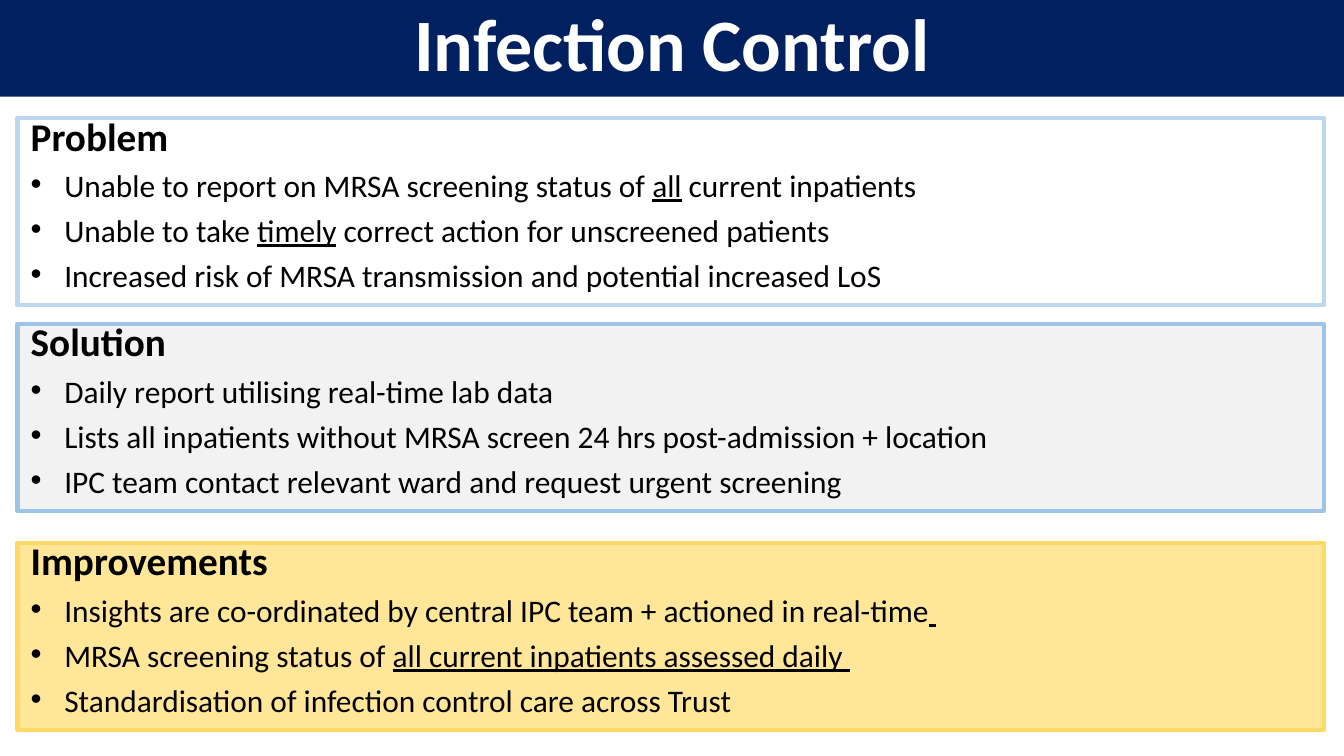
from lxml import etree
from pptx import Presentation
from pptx.dml.color import RGBColor
from pptx.enum.shapes import MSO_SHAPE
from pptx.enum.text import MSO_ANCHOR, MSO_AUTO_SIZE, PP_ALIGN
from pptx.oxml.ns import qn
from pptx.util import Inches, Pt

RECTANGLE = MSO_SHAPE.RECTANGLE
TOP, MIDDLE = MSO_ANCHOR.TOP, MSO_ANCHOR.MIDDLE
LEFT, CENTER = PP_ALIGN.LEFT, PP_ALIGN.CENTER
NO_AUTOFIT = MSO_AUTO_SIZE.NONE

FONT = "Calibri"
SLIDE_WIDTH = 10
SLIDE_HEIGHT = SLIDE_WIDTH * 9 / 16
BULLET_INDENT = Inches(0.25)
PANEL_LEFT, PANEL_WIDTH, PANEL_HEIGHT = 0.13, 9.72, 1.39

# Each bullet is a list of (text, underlined) spans.
PANELS = [
    (0.88, "FFFFFF", "BDD7EE", "Problem", [
        [("Unable to report on MRSA screening status of ", False),
         ("all", True), (" current inpatients", False)],
        [("Unable to take ", False), ("timely", True),
         (" correct action for unscreened patients", False)],
        [("Increased risk of MRSA transmission and potential increased LoS", False)],
    ]),
    (2.41, "F2F2F2", "9DC3E6", "Solution", [
        [("Daily report utilising real-time lab data", False)],
        [("Lists all inpatients without MRSA screen 24 hrs post-admission + location", False)],
        [("IPC team contact relevant ward and request urgent screening", False)],
    ]),
    (4.04, "FFE699", "FFD966", "Improvements", [
        [("Insights are co-ordinated by central IPC team + actioned in real-time", False),
         (" ", True)],
        [("MRSA screening status of ", False),
         ("all current inpatients assessed daily ", True)],
        [("Standardisation of infection control care across Trust", False)],
    ]),
]


def color(hex_string):
    return RGBColor.from_string(hex_string)


def add_span(para, text, size, fill="000000", bold=False, underline=False):
    span = para.add_run()
    span.text = text
    font = span.font
    font.name, font.size, font.bold = FONT, Pt(size), bold
    font.underline = underline
    font.color.rgb = color(fill)


def add_bullet(para):
    """Give the paragraph a hanging round bullet."""
    properties = para._p.get_or_add_pPr()
    properties.set("marL", str(BULLET_INDENT))
    properties.set("indent", str(-BULLET_INDENT))
    etree.SubElement(properties, qn("a:buFont"), typeface="Arial")
    etree.SubElement(properties, qn("a:buChar"), char="•")


def format_frame(frame, anchor):
    frame.word_wrap = True
    frame.auto_size = NO_AUTOFIT
    frame.vertical_anchor = anchor


def format_title(title, left, top, width, height):
    title.left, title.top = Inches(left), Inches(top)
    title.width, title.height = Inches(width), Inches(height)
    title.fill.solid()
    title.fill.fore_color.rgb = color("002060")
    format_frame(title.text_frame, MIDDLE)
    para = title.text_frame.paragraphs[0]
    para.alignment, para.line_spacing = CENTER, 0.9
    add_span(para, "Infection Control", 39.6, fill="FFFFFF", bold=True)


def add_panel(slide, left, top, width, height, fill, outline, heading, bullets):
    panel = slide.shapes.add_shape(
        RECTANGLE, Inches(left), Inches(top), Inches(width), Inches(height))
    panel.shadow.inherit = False
    panel.fill.solid()
    panel.fill.fore_color.rgb = color(fill)
    panel.line.color.rgb = color(outline)
    panel.line.width = Pt(2.25)

    frame = panel.text_frame
    format_frame(frame, TOP)
    add_span(frame.paragraphs[0], heading, 21, bold=True)
    for spans in bullets:
        para = frame.add_paragraph()
        for text, underline in spans:
            add_span(para, text, 16.8, underline=underline)
    for para in frame.paragraphs:
        para.alignment = LEFT
        para.line_spacing = 0.7
        para.space_before = Pt(10)
    for para in frame.paragraphs[1:]:
        add_bullet(para)


def main():
    deck = Presentation()
    deck.slide_width, deck.slide_height = Inches(SLIDE_WIDTH), Inches(SLIDE_HEIGHT)
    slide = deck.slides.add_slide(deck.slide_layouts[5])
    format_title(slide.shapes.title, 0, -0.01, SLIDE_WIDTH, 0.73)
    for top, *content in PANELS:
        add_panel(slide, PANEL_LEFT, top, PANEL_WIDTH, PANEL_HEIGHT, *content)
    deck.save("out.pptx")


if __name__ == "__main__":
    main()
